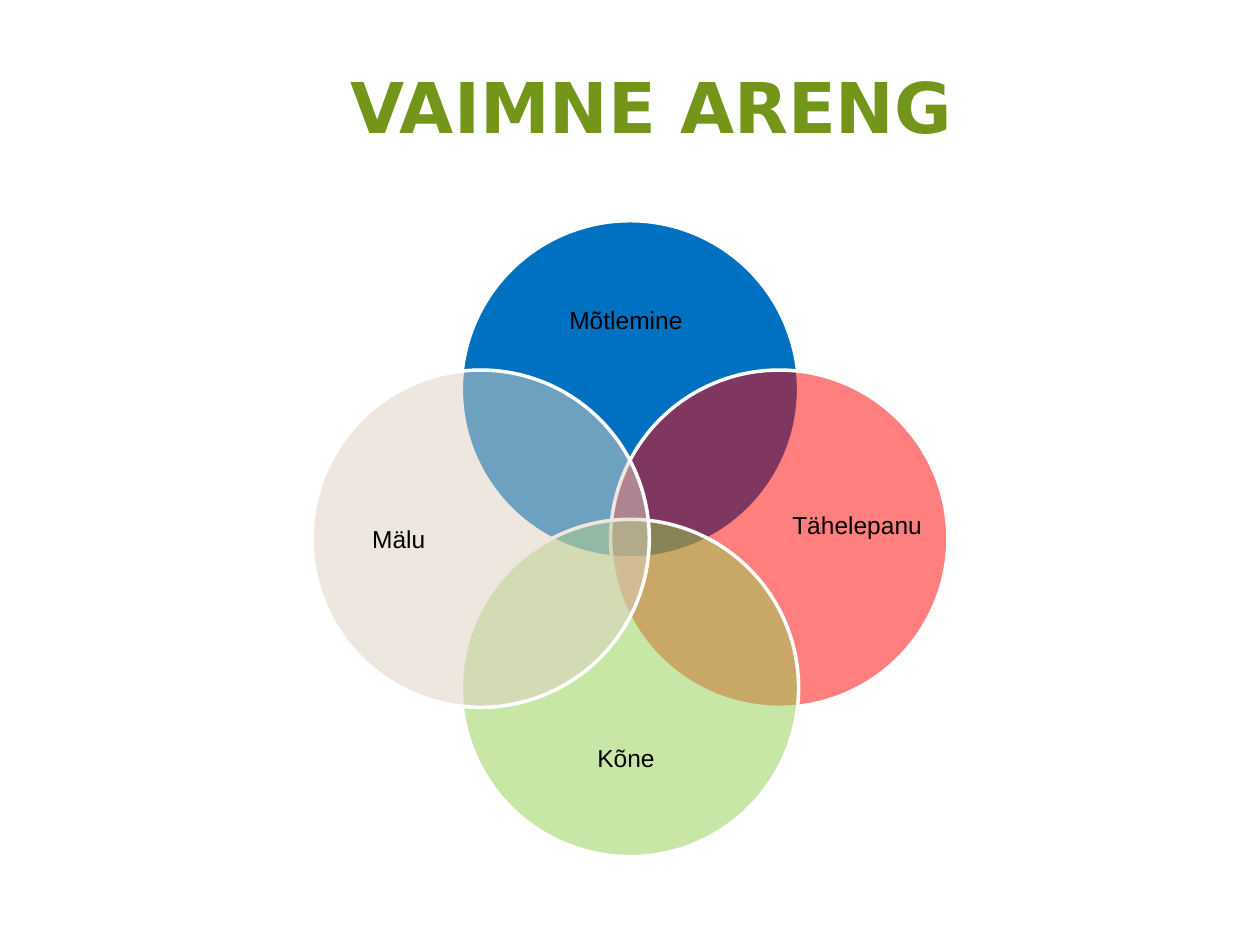
import pptx
import pptx.util
import pptx.dml.color
import pptx.enum.shapes
import pptx.enum.text
import pptx.oxml
import pptx.oxml.ns
from pptx.util import Cm, Pt


def rgb(color):
    return pptx.dml.color.RGBColor.from_string(color)


prs = pptx.Presentation()
prs.slide_width, prs.slide_height = Cm(25.4), Cm(19.05)
s = prs.slides.add_slide(prs.slide_layouts[5])

# Title
title = s.shapes.title
title.left, title.top, title.width, title.height = Cm(1.7), Cm(0.53), Cm(22.86), Cm(3.2)
tf = title.text_frame
tf.text = "VAIMNE ARENG"
tf.vertical_anchor = pptx.enum.text.MSO_ANCHOR.MIDDLE
p = tf.paragraphs[0]
p.alignment = pptx.enum.text.PP_ALIGN.CENTER
p.font.name, p.font.size, p.font.bold = "DejaVu Sans", Pt(40), True
p.font.color.rgb = rgb("72951A")

# Venn diagram: four circles around one centre
CX, CY = 12.7, 10.86
RADIUS, OFFSET = 3.4, 3.01
# text, direction x and y, fill, opacity in %, right and bottom label inset
circles = [
    ("Mõtlemine", 0, -1, "0070C0", 100, 0.16, 0),
    ("Tähelepanu", 1, 0, "FF0000", 50, 0, 0.56),
    ("Kõne", 0, 1, "92D050", 50, 0.16, 0),
    ("Mälu", -1, 0, "DDD1C1", 50, 0.16, 0),
]
for text, dx, dy, color, opacity, right, bottom in circles:
    # Circle
    sp = s.shapes.add_shape(
        pptx.enum.shapes.MSO_SHAPE.OVAL,
        Cm(CX + dx * OFFSET - RADIUS), Cm(CY + dy * OFFSET - RADIUS),
        Cm(2 * RADIUS), Cm(2 * RADIUS))
    sp.shadow.inherit = False
    sp.fill.solid()
    sp.fill.fore_color.rgb = rgb(color)
    sp.line.color.rgb = rgb("FFFFFF")
    sp.line.width = Pt(2)
    if opacity < 100:
        clr = sp.fill._xPr.find(".//" + pptx.oxml.ns.qn("a:srgbClr"))
        alpha = pptx.oxml.parse_xml(
            f'<a:alpha {pptx.oxml.ns.nsdecls("a")} val="{opacity * 1000}"/>')
        clr.append(alpha)

    # Label, towards the outer side of its circle
    w, h = (2.62, 5.23) if dx else (5.23, 2.16)
    label = s.shapes.add_textbox(
        Cm(CX + dx * 4.58 - w / 2), Cm(CY + dy * 4.42 - h / 2), Cm(w), Cm(h))
    tf = label.text_frame
    tf.text = text
    tf.word_wrap = False
    tf.vertical_anchor = pptx.enum.text.MSO_ANCHOR.MIDDLE
    tf.margin_left = tf.margin_top = 0
    tf.margin_right, tf.margin_bottom = Cm(right), Cm(bottom)
    p = tf.paragraphs[0]
    p.alignment = pptx.enum.text.PP_ALIGN.CENTER
    p.font.name, p.font.size = "Arial", Pt(14)
    p.font.color.rgb = rgb("000000")

prs.save("out.pptx")
